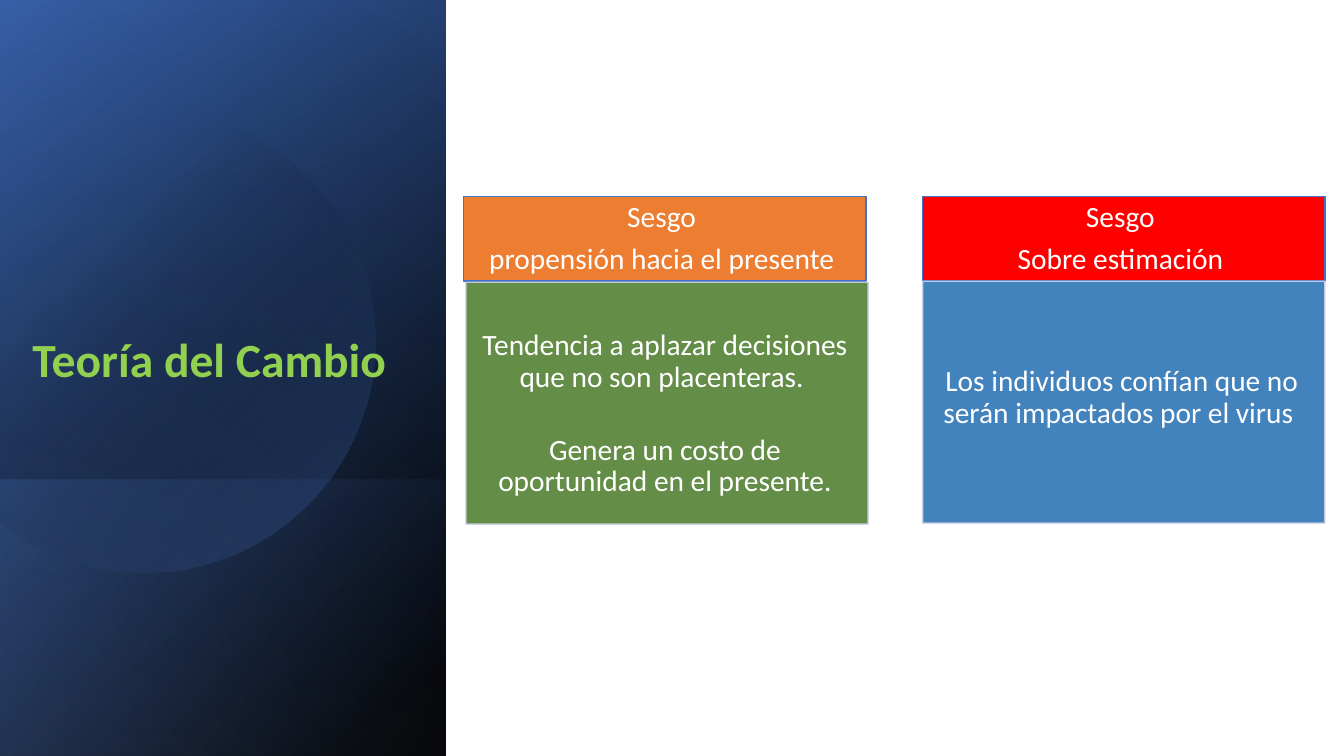
import math

from lxml import etree
from pptx import Presentation
from pptx.dml.color import RGBColor
from pptx.enum import shapes, text
from pptx.oxml import ns
from pptx.util import Inches, Pt

COLORS = {
    "black": "000000",
    "navy": "2F5597",
    "blue": "4472C4",
    "pale": "8FAADC",
    "lime": "92D050",
    "white": "FFFFFF",
    "orange": "ED7D31",
    "red": "FF0000",
    "green": "548235",
    "steel": "2E75B6",
    "edge": "CFD5EA",
}


class BiasSlide:
    font = "Calibri"
    line_spacing = 0.9

    def __init__(self, prs):
        self.slide = prs.slides.add_slide(prs.slide_layouts[6])

    def color(self, name):
        return RGBColor.from_string(COLORS[name])

    def set_alpha(self, fill_element, percent):
        color = fill_element.find(".//" + ns.qn("a:srgbClr"))
        etree.SubElement(color, ns.qn("a:alpha"), val=str(percent * 1000))

    def gradient(self, shape, stops, angle):
        shape.shadow.inherit = False
        shape.line.fill.background()
        shape.fill.gradient()
        grad = shape.element.spPr.find(ns.qn("a:gradFill"))
        for child in list(grad):
            grad.remove(child)
        stop_list = etree.SubElement(grad, ns.qn("a:gsLst"))
        for position, name, alpha in stops:
            stop = etree.SubElement(stop_list, ns.qn("a:gs"), pos=str(position * 1000))
            etree.SubElement(stop, ns.qn("a:srgbClr"), val=COLORS[name])
            self.set_alpha(stop, alpha)
        etree.SubElement(grad, ns.qn("a:lin"), ang=str(angle * 60000), scaled="0")

    def panel(self, top, height, stops, angle):
        layer = self.slide.shapes.add_shape(
            shapes.MSO_SHAPE.RECTANGLE, 0, Inches(top), Inches(4.42), Inches(height))
        self.gradient(layer, stops, angle)

    def clipped_disc(self, center_x, center_y, radius, stops, angle, steps=90):
        half_sweep = math.acos(-center_x / radius)
        sweep = [half_sweep * (2 * i / steps - 1) for i in range(steps + 1)]
        outline = [(Inches(max(0, center_x + radius * math.cos(a))),
                    Inches(center_y + radius * math.sin(a))) for a in sweep]
        builder = self.slide.shapes.build_freeform(*outline[0])
        builder.add_line_segments(outline[1:], close=True)
        self.gradient(builder.convert_to_shape(), stops, angle)

    def put_text(self, shape, lines, size, color, insets, anchor, gap=0, bold=False):
        frame = shape.text_frame
        frame.word_wrap = True
        frame.vertical_anchor = anchor
        (frame.margin_left, frame.margin_top,
         frame.margin_right, frame.margin_bottom) = map(Inches, insets)
        frame.text = "\n".join(lines)
        for paragraph in frame.paragraphs:
            paragraph.alignment = text.PP_ALIGN.CENTER
            paragraph.line_spacing = self.line_spacing
            paragraph.space_after = Pt(0)
            for run in paragraph.runs:
                run.font.name = self.font
                run.font.size = Pt(size)
                run.font.bold = bold
                run.font.color.rgb = self.color(color)
        for paragraph in frame.paragraphs[:-1]:
            paragraph.space_after = Pt(gap)

    def title(self, wording):
        box = self.slide.shapes.add_textbox(
            Inches(0.19), Inches(2.46), Inches(3.77), Inches(1.94))
        self.put_text(box, [wording], 34, "lime", (0, 0, 0, 0.6),
                      text.MSO_ANCHOR.BOTTOM, bold=True)

    def block(self, left, top, height, fill, edge, opacity=100):
        block = self.slide.shapes.add_shape(
            shapes.MSO_SHAPE.RECTANGLE,
            Inches(left), Inches(top), Inches(3.99), Inches(height))
        block.shadow.inherit = False
        block.fill.solid()
        block.fill.fore_color.rgb = self.color(fill)
        block.line.color.rgb = self.color(edge)
        block.line.width = Pt(1)
        if opacity < 100:
            properties = block.element.spPr
            self.set_alpha(properties.find(ns.qn("a:solidFill")), opacity)
            self.set_alpha(properties.find(ns.qn("a:ln")), opacity)
        return block

    def header(self, left, fill, lines):
        header = self.block(left, 1.95, 0.84, fill, "blue")
        self.put_text(header, lines, 21, "white", (0.16, 0.09, 0.16, 0.09),
                      text.MSO_ANCHOR.MIDDLE, gap=7.35)

    def body(self, left, top, fill, lines, text_top):
        body = self.block(left, top, 2.4, fill, "edge", opacity=90)
        self.put_text(body, lines, 21, "white", (0.12, text_top, 0.16, 0.18),
                      text.MSO_ANCHOR.TOP, gap=29)


def main():
    prs = Presentation()
    prs.slide_width, prs.slide_height = Inches(13.33), Inches(7.5)
    page = BiasSlide(prs)

    page.panel(0, 7.5, [(0, "navy", 100), (92, "black", 100)], 50)
    page.panel(0, 7.5, [(0, "blue", 46), (100, "black", 0)], 60)
    page.panel(4.76, 2.74, [(0, "blue", 29), (98, "black", 30)], 40)
    page.clipped_disc(1.42, 3.38, 2.3, [(29, "black", 0), (100, "blue", 43)], 45)
    page.panel(0, 7.5, [(0, "black", 0), (100, "pale", 11)], 120)
    page.title("Teoría del Cambio")

    page.header(4.6, "orange", ["Sesgo ", "propensión hacia el presente "])
    page.body(4.62, 2.8, "green", [
        "Tendencia a aplazar decisiones que no son placenteras. ",
        "Genera un costo de oportunidad en el presente.",
    ], 0.48)
    page.header(9.15, "red", ["Sesgo ", "Sobre estimación "])
    page.body(9.15, 2.79, "steel", [
        "Los individuos confían que no serán impactados por el virus ",
    ], 0.84)

    prs.save("out.pptx")


if __name__ == "__main__":
    main()
